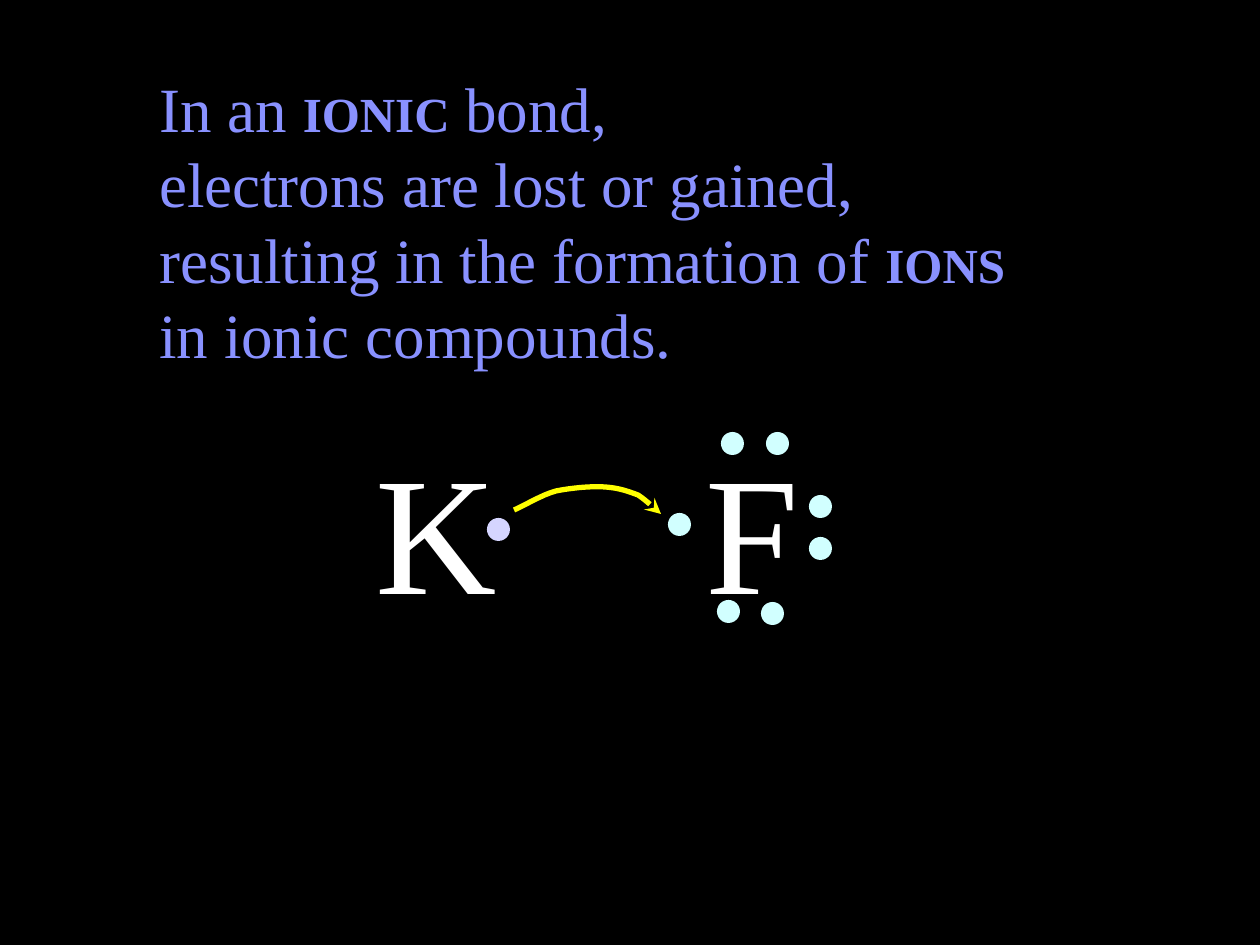
from pptx import Presentation
from pptx.dml.color import RGBColor
from pptx.enum.shapes import MSO_SHAPE
from pptx.enum.text import MSO_AUTO_SIZE
from pptx.oxml.ns import qn
from pptx.util import Pt
from lxml.etree import SubElement

PX = 914400 / 126
FONT = "Times New Roman"
BLACK = RGBColor(0x00, 0x00, 0x00)
WHITE = RGBColor(0xFF, 0xFF, 0xFF)
PERIWINKLE = RGBColor(0x89, 0x91, 0xFF)
PALE_CYAN = RGBColor(0xD1, 0xFF, 0xFF)
LAVENDER = RGBColor(0xD5, 0xD5, 0xFF)
YELLOW = RGBColor(0xFF, 0xFF, 0x00)

# Each line is a list of (text, is keyword)
DEFINITION = [
    [("In an ", False), ("IONIC", True), (" bond,", False)],
    [("electrons are lost or gained,", False)],
    [("resulting in the formation of ", False), ("IONS", True)],
    [("in ionic compounds.", False)],
]
DEFINITION_BOX = (147, 63, 872, 315)

# Symbol, its box, electron colour, top left corners of the electrons
ATOMS = [
    ("F", (693, 420, 118, 214), PALE_CYAN,
     [(668, 513), (809, 495), (721, 432), (766, 432),
      (717, 600), (809, 537), (761, 602)]),
    ("K", (363, 420, 146, 214), LAVENDER, [(487, 518)]),
]
ELECTRON_SIZE = 23

# Bezier curve: start, then two control points and an end for each part
TRANSFER_START = (514, 510)
TRANSFER_CURVES = [
    ((522, 507), (541, 495), (556, 491)),
    ((571, 488), (591, 486), (605, 487)),
    ((619, 488), (627, 491), (638, 495)),
    ((646, 500), (656, 510), (661, 514)),
]
CURVE_STEPS = 8


def emu(*lengths):
    return [round(length * PX) for length in lengths]


def add_text(shapes, box, lines, size, color, keyword_size=None):
    frame = shapes.add_textbox(*emu(*box)).text_frame
    frame.word_wrap = False
    frame.auto_size = MSO_AUTO_SIZE.SHAPE_TO_FIT_TEXT
    for index, line in enumerate(lines):
        paragraph = frame.paragraphs[0] if index == 0 else frame.add_paragraph()
        paragraph.font.name = FONT
        paragraph.font.size = Pt(size)
        paragraph.font.color.rgb = color
        for text, is_keyword in line:
            run = paragraph.add_run()
            run.text = text
            if is_keyword:
                run.font.size = Pt(keyword_size)
                run.font.bold = True


def add_electron(shapes, left, top, color):
    electron = shapes.add_shape(
        MSO_SHAPE.OVAL, *emu(left, top, ELECTRON_SIZE, ELECTRON_SIZE))
    electron.shadow.inherit = False
    electron.fill.solid()
    electron.fill.fore_color.rgb = color
    electron.line.fill.background()


def curve_points(start, curves):
    """Return points along the joined cubic Bezier curves, after the start."""
    points = []
    for control_1, control_2, end in curves:
        for step in range(1, CURVE_STEPS + 1):
            t = step / CURVE_STEPS
            points.append(tuple(
                (1 - t) ** 3 * a + 3 * (1 - t) ** 2 * t * b
                + 3 * (1 - t) * t ** 2 * c + t ** 3 * d
                for a, b, c, d in zip(start, control_1, control_2, end)))
        start = end
    return points


def add_transfer_arrow(shapes):
    builder = shapes.build_freeform(*emu(*TRANSFER_START))
    builder.add_line_segments(
        [emu(*point) for point in curve_points(TRANSFER_START, TRANSFER_CURVES)],
        close=False)
    arrow = builder.convert_to_shape()
    arrow.shadow.inherit = False
    arrow.fill.background()
    arrow.line.color.rgb = YELLOW
    arrow.line.width = Pt(3)
    SubElement(arrow.line._get_or_add_ln(), qn("a:tailEnd"), type="stealth")


def main():
    presentation = Presentation()
    presentation.slide_width, presentation.slide_height = emu(1260, 945)
    slide = presentation.slides.add_slide(presentation.slide_layouts[6])
    slide.background.fill.solid()
    slide.background.fill.fore_color.rgb = BLACK

    add_text(slide.shapes, DEFINITION_BOX, DEFINITION, 36, PERIWINKLE, 28)
    for symbol, box, color, electrons in ATOMS:
        atom = slide.shapes.add_group_shape()
        add_text(atom.shapes, box, [[(symbol, False)]], 96, WHITE)
        for left, top in electrons:
            add_electron(atom.shapes, left, top, color)
    add_transfer_arrow(slide.shapes)
    presentation.save("out.pptx")


if __name__ == "__main__":
    main()
